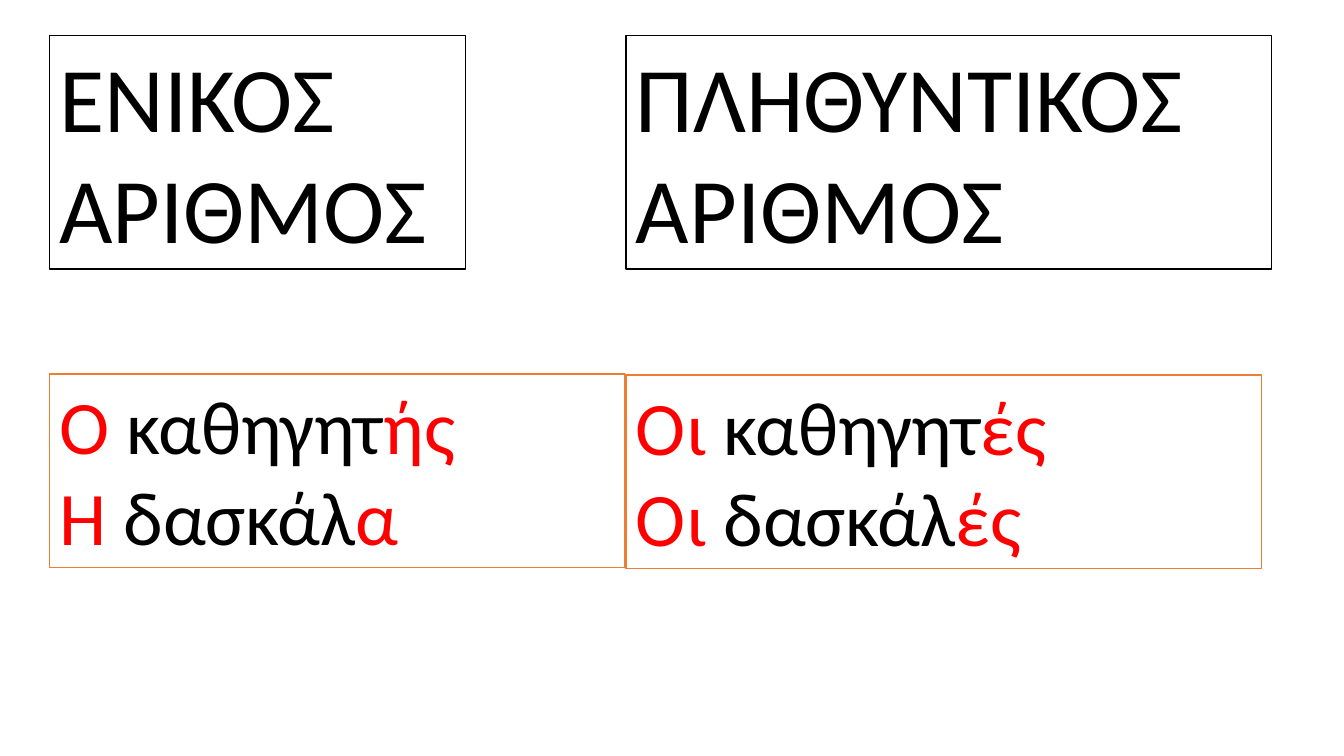
from dataclasses import dataclass

from pptx import Presentation
from pptx.dml.color import RGBColor
from pptx.enum.text import MSO_ANCHOR, MSO_AUTO_SIZE, PP_ALIGN
from pptx.slide import Slide
from pptx.util import Inches, Pt

BLACK, RED, ORANGE, WHITE = "000000", "FF0000", "ED7D31", "FFFFFF"
SINGULAR_LEFT, PLURAL_LEFT = 0.49, 6.21


@dataclass(frozen=True)
class Part:
    text: str
    color: str = BLACK


@dataclass(frozen=True)
class Panel:
    left: float
    top: float
    width: float
    height: float
    size: int
    border: str
    lines: list[list[Part]]


def rgb(color: str) -> RGBColor:
    return RGBColor.from_string(color)


def noun(article: str, stem: str, ending: str) -> list[Part]:
    """Mark the article and the ending, which change with number."""
    return [Part(f"{article} ", RED), Part(stem), Part(ending, RED)]


def heading(left: float, width: float, number: str) -> Panel:
    return Panel(left, 0.35, width, 2.32, 66, BLACK,
                 [[Part(number)], [Part("ΑΡΙΘΜΟΣ")]])


def examples(left: float, top: float, width: float,
             nouns: list[list[Part]]) -> Panel:
    return Panel(left, top, width, 1.92, 54, ORANGE, nouns)


def draw_panel(slide: Slide, panel: Panel) -> None:
    box = slide.shapes.add_textbox(Inches(panel.left), Inches(panel.top),
                                   Inches(panel.width), Inches(panel.height))
    box.fill.solid()
    box.fill.fore_color.rgb = rgb(WHITE)
    box.line.color.rgb = rgb(panel.border)
    box.line.width = Pt(1)

    frame = box.text_frame
    frame.word_wrap = True
    frame.auto_size = MSO_AUTO_SIZE.SHAPE_TO_FIT_TEXT
    frame.vertical_anchor = MSO_ANCHOR.TOP
    for index, parts in enumerate(panel.lines):
        paragraph = frame.add_paragraph() if index else frame.paragraphs[0]
        paragraph.alignment = PP_ALIGN.LEFT
        for part in parts:
            run = paragraph.add_run()
            run.text = part.text
            run.font.name = "Calibri"
            run.font.size = Pt(panel.size)
            run.font.color.rgb = rgb(part.color)


PANELS = [
    # Headings
    heading(SINGULAR_LEFT, 4.13, "ΕΝΙΚΟΣ"),
    heading(PLURAL_LEFT, 6.4, "ΠΛΗΘΥΝΤΙΚΟΣ"),
    # Example nouns
    examples(SINGULAR_LEFT, 3.71, 5.71,
             [noun("Ο", "καθηγητ", "ής"), noun("Η", "δασκάλ", "α")]),
    examples(PLURAL_LEFT, 3.72, 6.3,
             [noun("Οι", "καθηγητ", "ές"), noun("Οι", "δασκάλ", "ές")]),
]


def main() -> None:
    deck = Presentation()
    deck.slide_width, deck.slide_height = Inches(13.33), Inches(7.5)
    slide = deck.slides.add_slide(deck.slide_layouts.get_by_name("Blank"))
    for panel in PANELS:
        draw_panel(slide, panel)
    deck.save("out.pptx")


if __name__ == "__main__":
    main()
